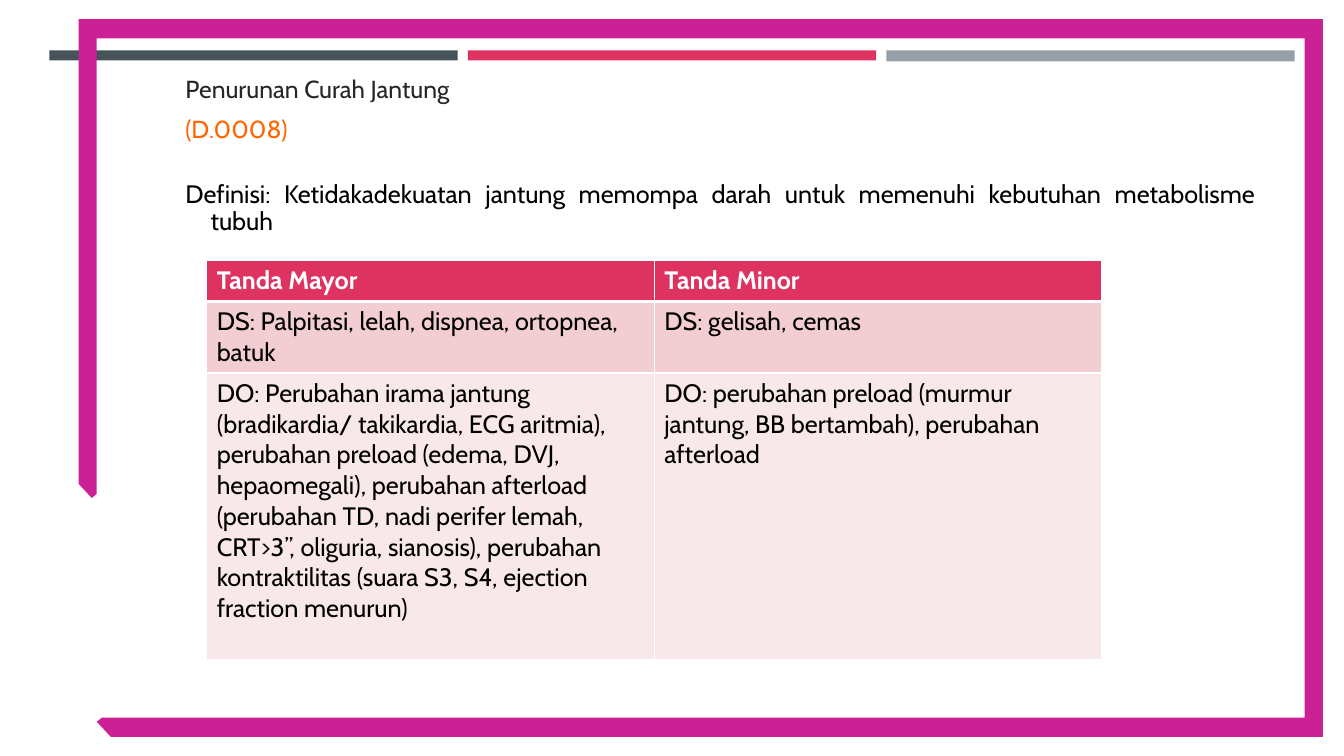
from pptx import Presentation
from pptx.dml.color import RGBColor
from pptx.enum.shapes import MSO_SHAPE
from pptx.enum.text import MSO_ANCHOR, PP_ALIGN
from pptx.oxml import parse_xml
from pptx.oxml.ns import nsdecls
from pptx.util import Inches, Pt

FONT = "Cabin"
WHITE, BLACK = "FFFFFF", "000000"
BARS = [("465359", 0.1), ("DE3261", 0.1), ("969FA7", 0.11)]
FRAME = [
    (0.78, 0.19), (13.12, 0.19), (13.12, 7.31), (1.1, 7.31), (0.96, 7.16),
    (1.01, 7.12), (12.94, 7.12), (12.94, 0.38), (0.96, 0.38), (0.96, 4.9),
    (0.91, 4.94), (0.78, 4.8),
]
SIGNS = [
    ("Tanda Mayor", "Tanda Minor"),
    ("DS: Palpitasi, lelah, dispnea, ortopnea, batuk", "DS: gelisah, cemas"),
    ("DO: Perubahan irama jantung (bradikardia/ takikardia, ECG aritmia), "
     "perubahan preload (edema, DVJ, hepaomegali), perubahan afterload "
     "(perubahan TD, nadi perifer lemah, CRT>3’’, oliguria, sianosis), "
     "perubahan kontraktilitas (suara S3, S4, ejection fraction menurun)",
     "DO: perubahan preload (murmur jantung, BB bertambah), "
     "perubahan afterload"),
]
ROW_HEIGHTS = [0.41, 0.71, 2.84]
ROW_FILLS = ["DE3261", "F2CED2", "F9E8EA"]


def rgb(color):
    return RGBColor.from_string(color)


def paint(sp, color):
    """Give a shape a flat fill with no outline or shadow."""
    sp.fill.solid()
    sp.fill.fore_color.rgb = rgb(color)
    sp.line.fill.background()
    sp.shadow.inherit = False


def add_bars(s):
    for i, (color, height) in enumerate(BARS):
        sp = s.shapes.add_shape(
            MSO_SHAPE.RECTANGLE, Inches(0.49 + i * 4.15), Inches(0.5),
            Inches(4.05), Inches(height))
        paint(sp, color)


def add_frame(s):
    points = [(Inches(x), Inches(y)) for x, y in FRAME]
    builder = s.shapes.build_freeform(*points[0])
    builder.add_line_segments(points[1:], close=True)
    paint(builder.convert_to_shape(), "CC2097")


def add_run(p, text, size, color, bold=False):
    r = p.add_run()
    r.text = text
    r.font.name = FONT
    r.font.size = Pt(size)
    r.font.bold = bold
    r.font.color.rgb = rgb(color)


def add_text_frame(s, left, top, width, height):
    tf = s.shapes.add_textbox(
        Inches(left), Inches(top), Inches(width), Inches(height)).text_frame
    tf.word_wrap = True
    return tf


def add_title(s):
    tf = add_text_frame(s, 1.74, 0.7, 11.18, 0.79)
    tf.vertical_anchor = MSO_ANCHOR.MIDDLE
    lines = [("Penurunan Curah Jantung", "262626"), ("(D.0008)", "FF6600")]
    for i, (text, color) in enumerate(lines):
        p = tf.add_paragraph() if i else tf.paragraphs[0]
        p.line_spacing = 0.9
        p.space_before = Pt(3.5 if i else 0)
        p.space_after = Pt(6)
        add_run(p, text, 17.6, color)


def add_definition(s):
    p = add_text_frame(s, 1.74, 1.75, 10.81, 0.75).paragraphs[0]
    p.alignment = PP_ALIGN.JUSTIFY
    p.line_spacing = 0.9
    pPr = p._p.get_or_add_pPr()
    pPr.set("marL", str(Inches(0.25)))
    pPr.set("indent", str(Inches(-0.25)))
    add_run(p, "Definisi: Ketidakadekuatan jantung memompa darah untuk "
            "memenuhi kebutuhan metabolisme tubuh", 18, BLACK)


def set_borders(cell, top, bottom):
    """Draw white cell borders; top and bottom widths are in points."""
    tcPr = cell._tc.get_or_add_tcPr()
    widths = {"lnL": 1, "lnR": 1, "lnT": top, "lnB": bottom}
    for i, (tag, width) in enumerate(widths.items()):
        tcPr.insert(i, parse_xml(
            f'<a:{tag} {nsdecls("a")} w="{Pt(width)}"><a:solidFill>'
            f'<a:srgbClr val="{WHITE}"/></a:solidFill></a:{tag}>'))


def add_signs_table(s):
    table = s.shapes.add_table(
        len(SIGNS), 2, Inches(2.05), Inches(2.58), Inches(8.88),
        Inches(sum(ROW_HEIGHTS))).table
    for i, texts in enumerate(SIGNS):
        header = i == 0
        table.rows[i].height = Inches(ROW_HEIGHTS[i])
        for j, text in enumerate(texts):
            cell = table.cell(i, j)
            cell.fill.solid()
            cell.fill.fore_color.rgb = rgb(ROW_FILLS[i])
            set_borders(cell, 3 if i == 1 else 1, 3 if header else 1)
            add_run(cell.text_frame.paragraphs[0], text, 18,
                    WHITE if header else BLACK, header)


def main():
    prs = Presentation()
    prs.slide_width = Inches(13.33)
    prs.slide_height = Inches(7.5)
    s = prs.slides.add_slide(prs.slide_layouts[6])
    add_bars(s)
    add_frame(s)
    add_title(s)
    add_definition(s)
    add_signs_table(s)
    prs.save("out.pptx")


if __name__ == "__main__":
    main()
